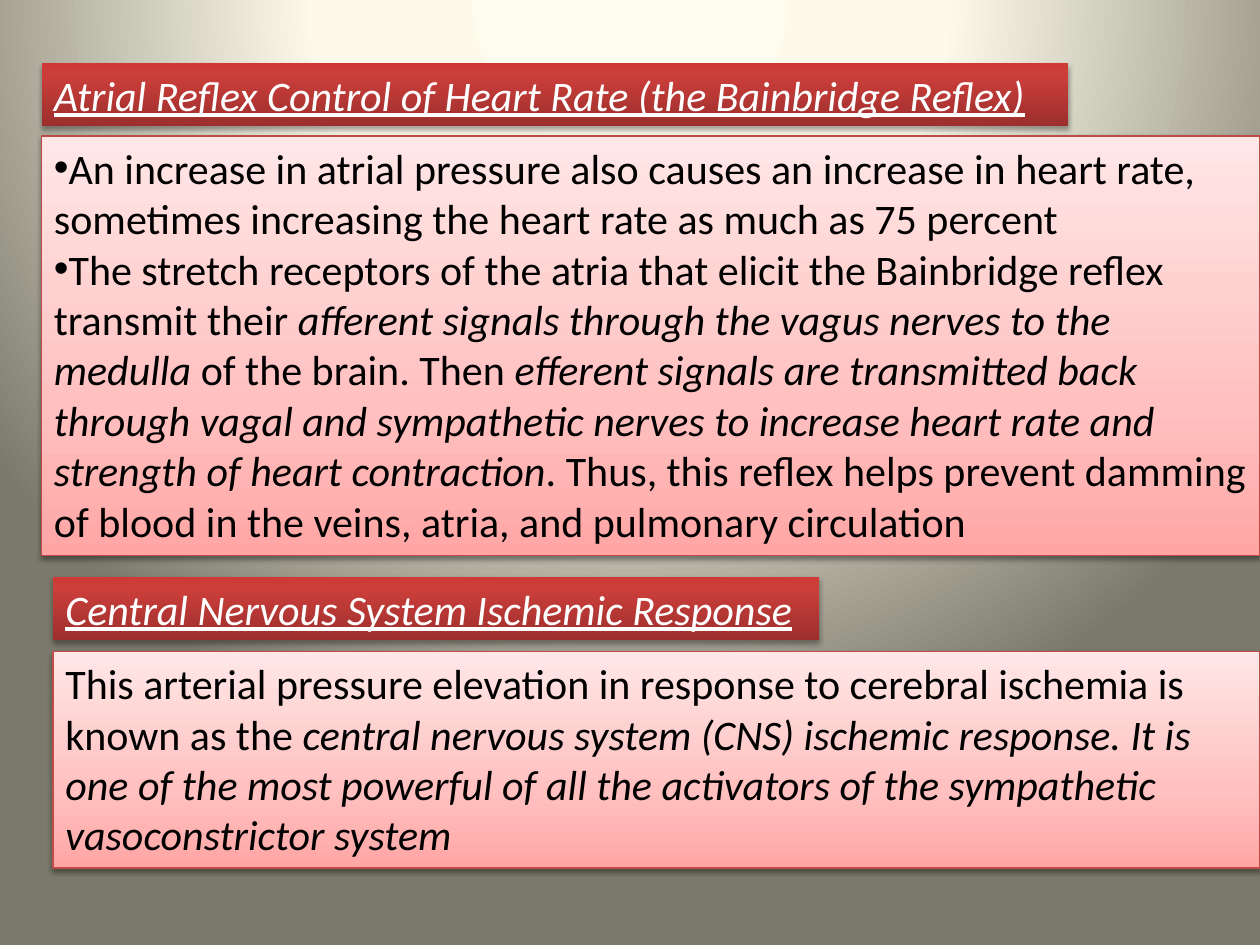
from dataclasses import dataclass

from lxml.etree import SubElement as Sub
from pptx import Presentation
from pptx.dml.color import RGBColor as Color
from pptx.enum.shapes import MSO_SHAPE as Shape
from pptx.enum.text import MSO_ANCHOR as Anchor, MSO_AUTO_SIZE as Auto, PP_ALIGN as Align
from pptx.oxml.ns import qn
from pptx.util import Inches, Pt

Stops = tuple[tuple[int, str], ...]


@dataclass(frozen=True)
class Look:
    """Fill, edge, shadow and text style of one sort of box."""
    fill: Stops
    ink: str
    edge: str | None
    shade: int      # shadow opacity, percent
    drop: float     # shadow distance, points
    slant: bool     # italic and underlined


@dataclass(frozen=True)
class Theme:
    font: str = "Calibri"
    size: int = 24
    back: Stops = ((0, "FEFCEE"), (40, "FDFAEA"), (100, "7B796B"))
    head: Look = Look(((0, "9C2F2D"), (80, "CB3E3A"), (100, "CE3B37")),
                      "FFFFFF", None, 35, 1.8, True)
    body: Look = Look(((0, "FFA6A5"), (35, "FFC0BF"), (100, "FFE7E7")),
                      "000000", "BF4C48", 38, 1.6, False)


@dataclass(frozen=True)
class Box:
    """A text box; asterisks in its text switch italics on and off."""
    left: float
    top: float
    width: float
    height: float
    look: Look
    text: tuple[str, ...]
    dots: bool = False
    wrap: bool = True


THEME = Theme()

BOXES = (
    Box(0.33, 0.5, 8.15, 0.5, THEME.head,
        ("Atrial Reflex Control of Heart Rate (the Bainbridge Reflex)",), wrap=False),
    Box(0.33, 1.08, 9.67, 3.33, THEME.body, (
        "An increase in atrial pressure also causes an increase in heart rate, "
        "sometimes increasing the heart rate as much as 75 percent",
        "The stretch receptors of the atria that elicit the Bainbridge reflex transmit "
        "their *afferent signals through the vagus nerves to the medulla* of the brain. "
        "Then *efferent signals are transmitted back through vagal and sympathetic nerves "
        "to increase heart rate and strength of heart contraction*. Thus, this reflex "
        "helps prevent damming of blood in the veins, atria, and pulmonary circulation",
    ), dots=True),
    Box(0.42, 4.58, 6.08, 0.5, THEME.head,
        ("Central Nervous System Ischemic Response",)),
    Box(0.42, 5.17, 9.58, 1.72, THEME.body, (
        "This arterial pressure elevation in response to cerebral ischemia is known as "
        "the *central nervous system (CNS) ischemic response. It is one of the most "
        "powerful of all the activators of the sympathetic vasoconstrictor system",
    )),
)


def blend(fill, root, stops: Stops):
    """Make a gradient with any number of stops; return its empty-ended element."""
    fill.gradient()
    grad = next(root.iter(qn("a:gradFill")))
    for child in list(grad):
        grad.remove(child)
    row = Sub(grad, qn("a:gsLst"))
    for pos, tint in stops:
        stop = Sub(row, qn("a:gs"), pos=str(pos * 1000))
        Sub(stop, qn("a:srgbClr"), val=tint)
    return grad


def paint_back(slide) -> None:
    """Light circle around the top edge, darker further out."""
    grad = blend(slide.background.fill, slide.element, THEME.back)
    ring = Sub(grad, qn("a:path"), {"path": "circle"})
    Sub(ring, qn("a:fillToRect"), l="50000", t="-80000", r="50000", b="180000")


def add_shade(shape, look: Look) -> None:
    shape.shadow.inherit = False
    root = shape.element.spPr.find(qn("a:effectLst"))
    shade = Sub(root, qn("a:outerShdw"), blurRad=str(Pt(3.1)), dist=str(Pt(look.drop)),
                dir="5400000", rotWithShape="0")
    tint = Sub(shade, qn("a:srgbClr"), val="000000")
    Sub(tint, qn("a:alpha"), val=str(look.shade * 1000))


def add_text(para, text: str, box: Box) -> None:
    para.alignment = Align.LEFT
    if box.dots:
        props = para._p.get_or_add_pPr()
        Sub(props, qn("a:buFont"), typeface="Arial")
        Sub(props, qn("a:buChar"), char="•")
    font = para.font
    font.name, font.size = THEME.font, Pt(THEME.size)
    font.color.rgb = Color.from_string(box.look.ink)
    if box.look.slant:
        font.italic = font.underline = True
    for i, part in enumerate(text.split("*")):
        run = para.add_run()
        run.text = part
        if i % 2:
            run.font.italic = True


def add_box(slide, box: Box) -> None:
    look = box.look
    shape = slide.shapes.add_shape(Shape.RECTANGLE, Inches(box.left), Inches(box.top),
                                   Inches(box.width), Inches(box.height))
    # Fill, edge and shadow
    grad = blend(shape.fill, shape.element, look.fill)
    Sub(grad, qn("a:lin"), ang=str(270 * 60000), scaled="0")
    if look.edge:
        shape.line.color.rgb = Color.from_string(look.edge)
        shape.line.width = Pt(0.75)
    else:
        shape.line.fill.background()
    add_shade(shape, look)
    # Text
    frame = shape.text_frame
    frame.word_wrap = box.wrap
    frame.auto_size = Auto.SHAPE_TO_FIT_TEXT
    frame.vertical_anchor = Anchor.TOP
    for i, text in enumerate(box.text):
        add_text(frame.add_paragraph() if i else frame.paragraphs[0], text, box)


def main() -> None:
    deck = Presentation()
    deck.slide_width, deck.slide_height = Inches(10), Inches(7.5)
    slide = deck.slides.add_slide(deck.slide_layouts[6])
    paint_back(slide)
    for box in BOXES:
        add_box(slide, box)
    deck.save("out.pptx")


if __name__ == "__main__":
    main()
